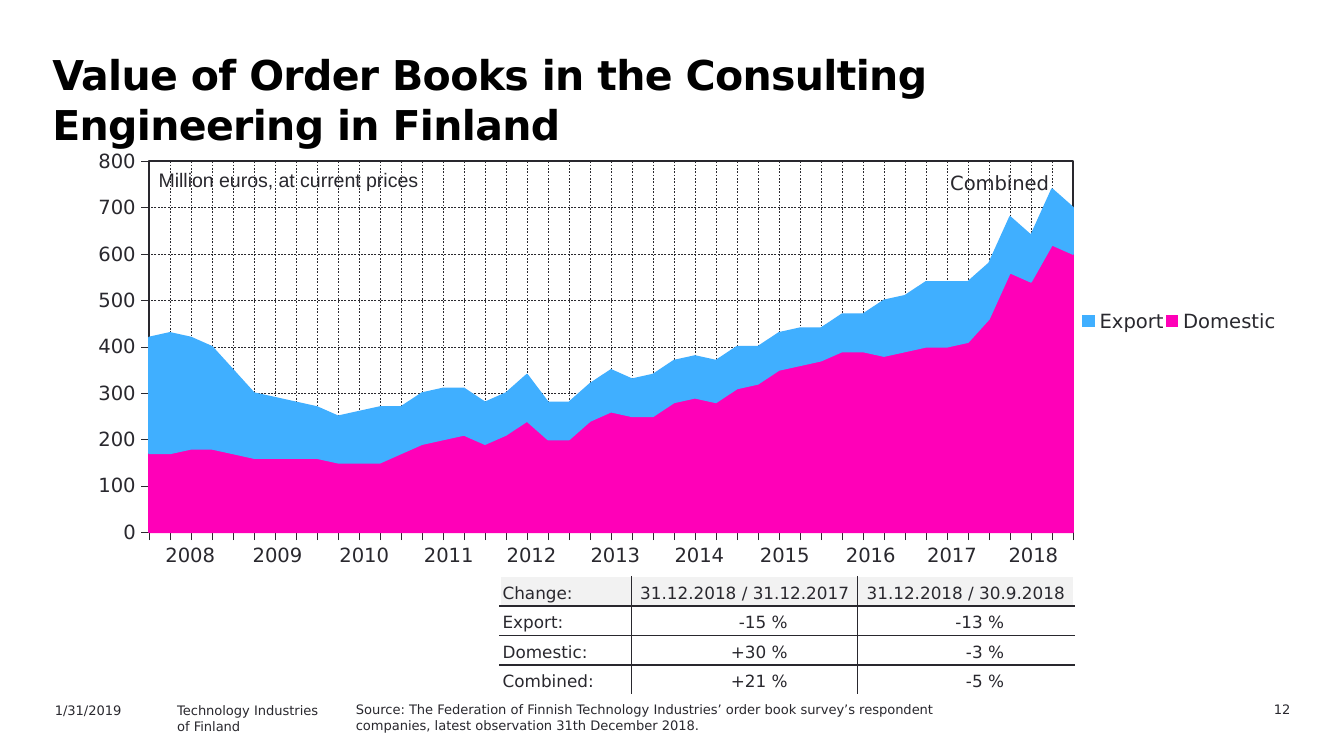
from itertools import accumulate

from pptx import Presentation
from pptx.chart.data import CategoryChartData
from pptx.dml.color import RGBColor
from pptx.enum.chart import XL_CHART_TYPE, XL_LEGEND_POSITION, XL_TICK_LABEL_POSITION, XL_TICK_MARK
from pptx.enum.dml import MSO_LINE
from pptx.enum.text import MSO_ANCHOR, PP_ALIGN
from pptx.oxml import parse_xml
from pptx.oxml.ns import nsdecls, qn
from pptx.util import Inches, Pt

INK, WHITE, HEADER = "29282E", "FFFFFF", "F2F2F2"
NO_STYLE = "{2D5ABB26-0587-4C30-8999-92F81FD0307C}"

DOMESTIC = [170, 170, 180, 180, 170, 160, 160, 160, 160, 150, 150, 150, 170, 190, 200,
            210, 190, 210, 240, 200, 200, 240, 260, 250, 250, 280, 290, 280, 310, 320,
            350, 360, 370, 390, 390, 380, 390, 400, 400, 410, 460, 560, 540, 620, 600]
EXPORT = [250, 260, 240, 220, 180, 140, 130, 120, 110, 100, 110, 120, 100, 110, 110,
          100, 90, 90, 100, 80, 80, 80, 90, 80, 90, 90, 90, 90, 90, 80,
          80, 80, 70, 80, 80, 120, 120, 140, 140, 130, 120, 120, 100, 120, 100]
YEAR_EDGES = [0, 6.3, 13, 19.2, 25.6, 31.5, 38.1, 44, 50.8, 56.8, 62.9, 68.9]
CHANGES = [
    ["Change:", "31.12.2018 / 31.12.2017", "31.12.2018 / 30.9.2018"],
    ["Export:", "-15 %", "-13 %"],
    ["Domestic:", "+30 %", "-3 %"],
    ["Combined:", "+21 %", "-5 %"],
]


def color(value):
    return RGBColor.from_string(value)


def grid(*cells):
    return [Inches(cell / 10) for cell in cells]


class OrderBookSlide:
    """Holds the style and the slide, measured in a grid of 100 columns by 56.25 rows."""

    font = "DejaVu Sans"

    def __init__(self, slide):
        self.slide = slide

    def style(self, font, size, ink=INK, bold=False, name=None):
        font.name, font.size, font.bold = name or self.font, Pt(size), bold
        font.color.rgb = color(ink)

    def line(self, line, width, ink=INK, dash=None):
        line.color.rgb, line.width = color(ink), Pt(width)
        if dash:
            line.dash_style = dash

    def text(self, place, lines, size=7, align=PP_ALIGN.LEFT, inset=1, wrap=True, **look):
        frame = self.slide.shapes.add_textbox(*grid(*place)).text_frame
        frame.word_wrap = wrap
        frame.margin_left = frame.margin_right = Inches(inset / 10)
        frame.text = "\n".join(lines)
        for paragraph in frame.paragraphs:
            paragraph.alignment = align
            self.style(paragraph.font, size, **look)
        return frame.paragraphs[0]

    def title(self, place, words):
        paragraph = self.text(place, [words], size=22, ink="000000", bold=True, inset=1.1)
        paragraph.line_spacing = Pt(27)
        paragraph.runs[0].font._element.set("spc", "-35")

    def layout(self, parent, index, x, y, w, h, target=""):
        for old in parent.findall(qn("c:layout")):
            parent.remove(old)
        parent.insert(index, parse_xml(
            f'<c:layout {nsdecls("c")}><c:manualLayout>{target}'
            '<c:xMode val="edge"/><c:yMode val="edge"/>'
            f'<c:x val="{x}"/><c:y val="{y}"/><c:w val="{w}"/><c:h val="{h}"/>'
            '</c:manualLayout></c:layout>'))

    def area_chart(self, place, series):
        data = CategoryChartData(number_format="#,##0")
        data.categories = [str(n + 1) for n in range(len(DOMESTIC))]
        for name, values, _ in series:
            data.add_series(name, values)
        chart = self.slide.shapes.add_chart(
            XL_CHART_TYPE.AREA_STACKED, *grid(*place), data).chart
        chart.has_title = False
        self.style(chart.font, 10.5)
        for area, (_, _, fill) in zip(chart.plots[0].series, series):
            area.format.fill.solid()
            area.format.fill.fore_color.rgb = color(fill)
            self.line(area.format.line, 0.88, fill)
        for axis in (chart.category_axis, chart.value_axis):
            axis.has_major_gridlines = True
            axis.major_tick_mark = XL_TICK_MARK.OUTSIDE
            axis.minor_tick_mark = XL_TICK_MARK.NONE
            self.line(axis.format.line, 0.22)
            self.line(axis.major_gridlines.format.line, 0.25, dash=MSO_LINE.DASH)
        chart.category_axis.tick_label_position = XL_TICK_LABEL_POSITION.NONE
        amounts = chart.value_axis
        amounts.minimum_scale, amounts.maximum_scale, amounts.major_unit = 0, 800, 100
        amounts.tick_labels.number_format = "#,##0"
        amounts.tick_labels.number_format_is_linked = False
        self.style(amounts.tick_labels.font, 10.5)
        for crossing in amounts._element.findall(qn("c:crossBetween")):
            crossing.set("val", "midCat")
        chart.has_legend = True
        chart.legend.position = XL_LEGEND_POSITION.RIGHT
        chart.legend.include_in_layout = False
        self.style(chart.legend.font, 10.5)
        self.layout(chart.legend._element, 1, 0.83, 0.37, 0.16, 0.08)
        plot_area = chart._chartSpace.chart.plotArea
        self.layout(plot_area, 0, 0.075, 0.029, 0.749, 0.885,
                    '<c:layoutTarget val="inner"/>')
        plot_area.append(parse_xml(
            f'<c:spPr {nsdecls("c", "a")}><a:noFill/><a:ln w="12700"><a:solidFill>'
            f'<a:srgbClr val="{INK}"/></a:solidFill></a:ln></c:spPr>'))

    def table(self, left, top, widths, row_height, rows, size):
        place = grid(left, top, sum(widths), row_height * len(rows))
        table = self.slide.shapes.add_table(len(rows), len(widths), *place).table
        table.first_row = table.horz_banding = False
        table._tbl.tblPr.find(qn("a:tableStyleId")).text = NO_STYLE
        for column, width in zip(table.columns, grid(*widths)):
            column.width = width
        for r, row in enumerate(rows):
            table.rows[r].height = Inches(row_height / 10)
            for c, words in enumerate(row):
                cell = table.cell(r, c)
                cell.text = words
                cell.fill.background()
                paragraph = cell.text_frame.paragraphs[0]
                paragraph.alignment = PP_ALIGN.CENTER
                self.style(paragraph.font, size)
        return table

    def borders(self, cell, inks):
        properties = cell._tc.get_or_add_tcPr()
        for index, (side, ink) in enumerate(zip("LRTB", inks)):
            properties.insert(index, parse_xml(
                f'<a:ln{side} {nsdecls("a")} w="12700"><a:solidFill>'
                f'<a:srgbClr val="{ink}"/></a:solidFill></a:ln{side}>'))

    def change_table(self, left, top, widths, row_height, rows):
        table = self.table(left, top, widths, row_height, rows, 9)
        last_row, last_column = len(rows) - 1, len(widths) - 1
        for r in range(len(rows)):
            for c in range(len(widths)):
                cell = table.cell(r, c)
                is_value = r > 0 and c > 0
                cell.vertical_anchor = MSO_ANCHOR.BOTTOM
                cell.margin_left = cell.margin_top = cell.margin_bottom = Inches(0.02)
                cell.margin_right = Inches(0.52 if is_value else 0.02)
                if is_value or c == 0:
                    cell.text_frame.paragraphs[0].alignment = (
                        PP_ALIGN.RIGHT if is_value else PP_ALIGN.LEFT)
                cell.fill.solid()
                cell.fill.fore_color.rgb = color(WHITE if r else HEADER)
                outer = (c == 0, c == last_column, r == 0, r == last_row)
                self.borders(cell, [WHITE if edge else INK for edge in outer])


def main():
    deck = Presentation()
    deck.slide_width, deck.slide_height = grid(100, 56.25)
    page = OrderBookSlide(deck.slides.add_slide(deck.slide_layouts[6]))

    page.title((2.8, 3.1, 87.4, 7.1),
               "Value of Order Books in the Consulting Engineering in Finland")
    page.area_chart((4.2, 11.1, 91.8, 31.2),
                    [("Domestic", DOMESTIC, "FF00B8"), ("Export", EXPORT, "40AFFF")])
    year_widths = [end - start for start, end in zip(YEAR_EDGES, YEAR_EDGES[1:])]
    years = list(accumulate([2008] + [1] * (len(year_widths) - 1)))
    page.table(11, 40, year_widths, 2.5, [[str(year) for year in years]], 10.5)
    page.text((10.9, 12, 22.1, 2.7), ["Million euros, at current prices"],
              size=10.5, inset=0.9, wrap=False, name="Arial")
    page.change_table(37.2, 42.9, [9.8, 16.8, 16.1], 2.2, CHANGES)
    page.text((69.8, 12.2, 10.6, 2.7), ["Combined"], size=10.5, inset=0.9)

    page.text((3.1, 51.8, 10, 1.8), ["1/31/2019"])
    page.text((12.2, 51.8, 18, 1.8), ["Technology Industries", "of Finland"])
    page.text((25.5, 51.7, 50, 1.8),
              ["Source: The Federation of Finnish Technology Industries’ order book survey’s "
               "respondent companies, latest observation 31th December 2018."])
    page.text((87.6, 51.7, 9.4, 1.8), ["12"], align=PP_ALIGN.RIGHT)
    deck.save("out.pptx")


if __name__ == "__main__":
    main()
